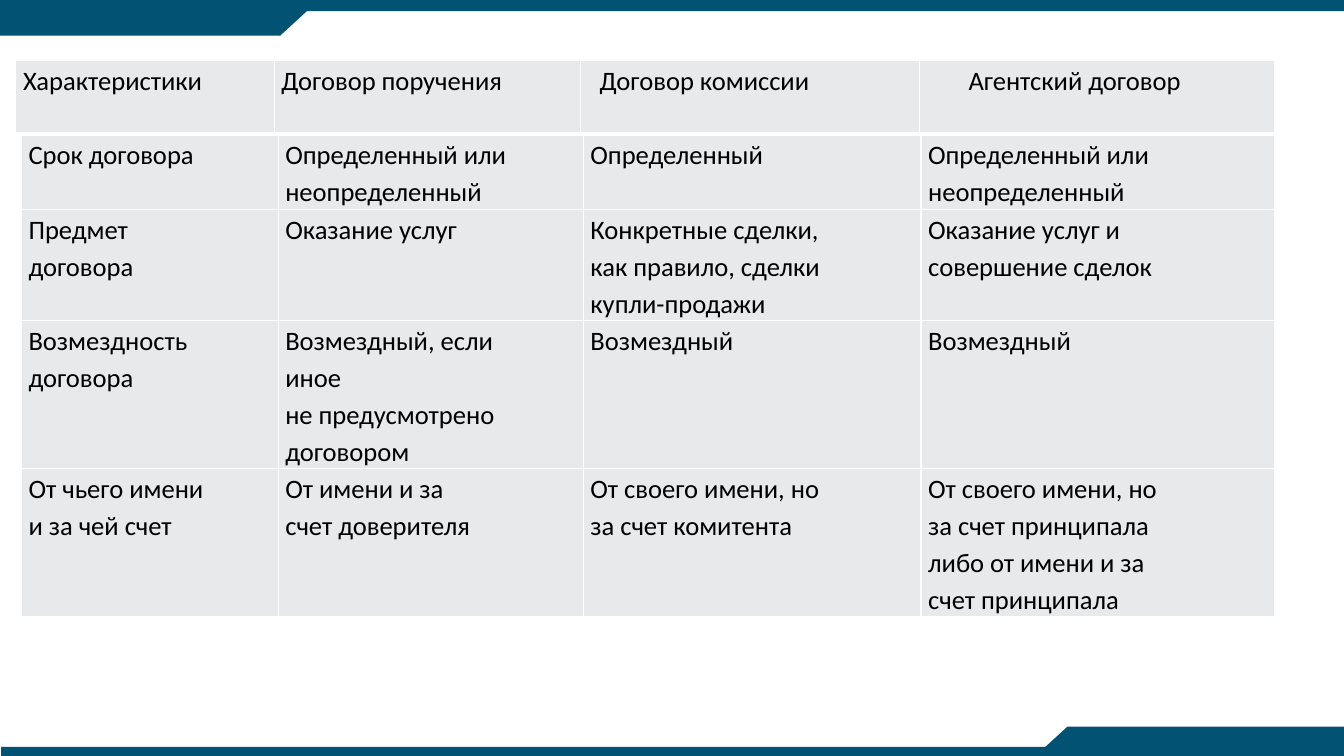
from pptx import Presentation
from pptx.dml.color import RGBColor
from pptx.enum.shapes import MSO_SHAPE
from pptx.oxml.ns import qn
from pptx.util import Cm, Pt
from lxml.etree import SubElement

COLORS = {"band": "025373", "cell": "E7E9EB", "border": "FFFFFF", "text": "000000"}
TEXT_FORMAT = {"name": "Calibri", "size": Pt(19), "bold": False}
MARGINS = {"margin_left": Cm(0.18), "margin_right": Cm(0.18),
           "margin_top": Cm(0), "margin_bottom": Cm(0)}
PAGE_WIDTH, PAGE_HEIGHT = 33.87, 19.05

HEADER = [["Характеристики", "Договор поручения", "Договор комиссии", "Агентский договор"]]
HEADER_INDENTS = [0.18, 0.18, 0.48, 1.24]
TERMS = [
    ["Срок договора", "Определенный или\nнеопределенный", "Определенный",
     "Определенный или\nнеопределенный"],
    ["Предмет\nдоговора", "Оказание услуг",
     "Конкретные сделки,\nкак правило, сделки\nкупли-продажи",
     "Оказание услуг и\nсовершение сделок"],
    ["Возмездность\nдоговора", "Возмездный, если\nиное\nне предусмотрено\nдоговором",
     "Возмездный", "Возмездный"],
    ["От чьего имени\nи за чей счет", "От имени и за\nсчет доверителя",
     "От своего имени, но\nза счет комитента",
     "От своего имени, но\nза счет принципала\nлибо от имени и за\nсчет принципала"],
]


def set_attributes(target, values):
    for name, value in values.items():
        setattr(target, name, value)


def add_band_shape(page, kind, left, top, width, height, rotation=0):
    shape = page.shapes.add_shape(kind, Cm(left), Cm(top), Cm(width), Cm(height))
    shape.shadow.inherit = False
    shape.fill.solid()
    shape.fill.fore_color.rgb = RGBColor.from_string(COLORS["band"])
    shape.line.fill.background()
    shape.rotation = rotation


def add_edge_band(page, bar_left, bar_top, tab_left, tab_top, slant_left, rotation):
    """Thin bar along a page edge with a slanted tab at one end."""
    add_band_shape(page, MSO_SHAPE.RECTANGLE, bar_left, bar_top, PAGE_WIDTH, 0.28)
    add_band_shape(page, MSO_SHAPE.RECTANGLE, tab_left, tab_top, 7.06, 0.77)
    add_band_shape(page, MSO_SHAPE.FLOWCHART_MERGE, slant_left, tab_top, 1.68, 0.77, rotation)


def add_borders(cell):
    properties = cell._tc.get_or_add_tcPr()
    for side in ("a:lnL", "a:lnR", "a:lnT", "a:lnB"):
        line = SubElement(properties, qn(side), w=str(Pt(1)))
        fill = SubElement(line, qn("a:solidFill"))
        SubElement(fill, qn("a:srgbClr"), val=COLORS["border"])


def format_cell(cell, text, indent):
    set_attributes(cell, MARGINS)
    cell.margin_left = Cm(indent)
    add_borders(cell)
    cell.fill.solid()
    cell.fill.fore_color.rgb = RGBColor.from_string(COLORS["cell"])
    para = cell.text_frame.paragraphs[0]
    para.text = text
    para.line_spacing = 1.15
    for span in para.runs:
        set_attributes(span.font, TEXT_FORMAT)
        span.font.color.rgb = RGBColor.from_string(COLORS["text"])


def add_contract_table(page, left, top, widths, heights, rows, indents):
    frame = page.shapes.add_table(len(rows), len(widths), Cm(left), Cm(top),
                                  Cm(sum(widths)), Cm(sum(heights)))
    table = frame.table
    set_attributes(table, {"first_row": False, "horz_banding": False})
    for column, width in zip(table.columns, widths):
        column.width = Cm(width)
    for row, height, texts in zip(table.rows, heights, rows):
        row.height = Cm(height)
        for cell, text, indent in zip(row.cells, texts, indents):
            format_cell(cell, text, indent)


def main():
    deck = Presentation()
    deck.slide_width, deck.slide_height = Cm(PAGE_WIDTH), Cm(PAGE_HEIGHT)
    page = deck.slides.add_slide(deck.slide_layouts[6])

    # Edge bands
    add_edge_band(page, 0, 0, 0, 0.13, 6.22, 0)
    add_edge_band(page, 0.03, 18.82, 26.9, 18.31, 26.06, 180)

    # Comparison of contracts: heading row, then the terms
    add_contract_table(page, 0.4, 1.53, [6.51, 7.72, 8.54, 8.95], [1.82],
                       HEADER, HEADER_INDENTS)
    add_contract_table(page, 0.54, 3.4, [6.47, 7.69, 8.51, 8.92],
                       [1.83, 2.72, 3.63, 3.63], TERMS, [0.18] * 4)

    deck.save("out.pptx")


if __name__ == "__main__":
    main()
